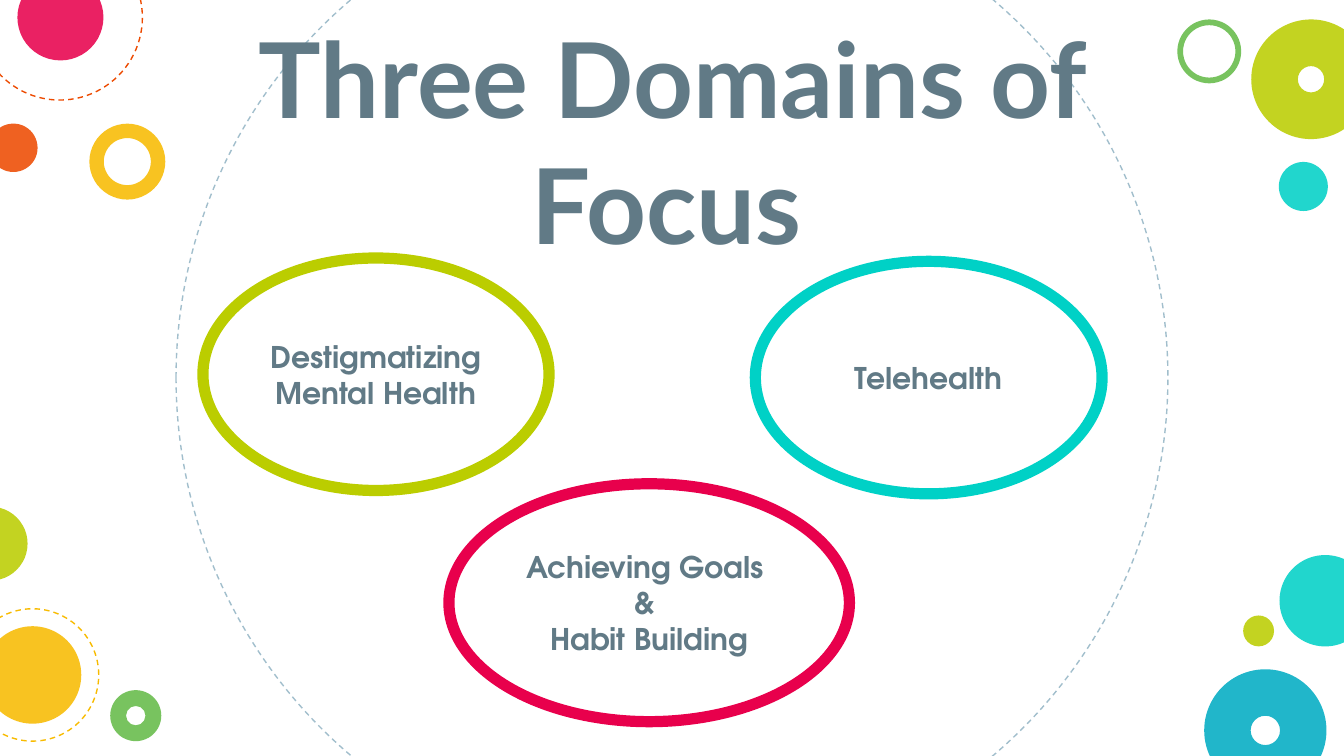
"""Build the "Three Domains of Focus" slide with its ring of coloured circles."""
import pptx
import pptx.dml.color
import pptx.enum.dml
import pptx.enum.shapes
import pptx.enum.text
import pptx.oxml
import pptx.oxml.ns
import pptx.util

PX = 4572
COLORS = {
    "slate": "617A86", "mist": "A1BECC", "teal": "00D1C6", "blue": "00ACC3",
    "lime": "BBCD00", "green": "65BB48", "amber": "F8BB00", "orange": "ED4A00",
    "pink": "E8004C",
}
OVAL = pptx.enum.shapes.MSO_SHAPE.OVAL
DONUT = pptx.enum.shapes.MSO_SHAPE.DONUT


def add_round(kind, box, fill=None, line=None, width=0.75):
    sp = s.shapes.add_shape(kind, *[v * PX for v in box])
    sp.shadow.inherit = False
    if fill:
        sp.fill.solid()
        sp.fill.fore_color.rgb = pptx.dml.color.RGBColor.from_string(COLORS[fill])
        clr = sp.fill._xPr.find(".//" + pptx.oxml.ns.qn("a:srgbClr"))
        clr.append(pptx.oxml.parse_xml(
            f'<a:alpha {pptx.oxml.ns.nsdecls("a")} val="87000"/>'))
    else:
        sp.fill.background()
    if line:
        sp.line.color.rgb = pptx.dml.color.RGBColor.from_string(COLORS[line])
        sp.line.width = pptx.util.Pt(width)
    else:
        sp.line.fill.background()
    return sp


def add_text(sp, anchor, font, paragraphs):
    tf = sp.text_frame
    tf.word_wrap = True
    tf.vertical_anchor = anchor
    tf.margin_left = tf.margin_right = tf.margin_top = tf.margin_bottom = 20 * PX
    for i, runs in enumerate(paragraphs):
        p = tf.add_paragraph() if i else tf.paragraphs[0]
        p.alignment = pptx.enum.text.PP_ALIGN.CENTER
        for text, size in runs:
            r = p.add_run()
            r.text = text
            r.font.name = font
            r.font.size = pptx.util.Pt(size)
            r.font.bold = True
            r.font.color.rgb = pptx.dml.color.RGBColor.from_string(COLORS["slate"])


prs = pptx.Presentation()
prs.slide_width = 2000 * PX
prs.slide_height = 1125 * PX
s = prs.slides.add_slide(prs.slide_layouts[6])

for left, top, size, color in [
    (262, -176, 1476, "mist"), (-34, -97, 246, "orange"), (-50, 906, 197, "amber"),
]:
    sp = add_round(OVAL, (left, top, size, size), line=color)
    sp.line.dash_style = pptx.enum.dml.MSO_LINE.DASH

for left, top, size, color in [
    (1904, 826, 136, "teal"), (1850, 916, 46, "lime"), (-16, 184, 72, "orange"),
    (26, -38, 128, "pink"), (-24, 932, 145, "amber"), (-69, 754, 110, "lime"),
    (1903, 241, 73, "teal"),
]:
    add_round(OVAL, (left, top, size, size), fill=color)

for left, top, size, color, ring in [
    (133, 184, 113, "amber", 0.19), (1792, 996, 182, "blue", 0.38),
    (1752, 29, 95, "green", 0.09), (1862, 29, 178, "lime", 0.39),
    (164, 1027, 76, "green", 0.31),
]:
    sp = add_round(DONUT, (left, top, size, size), fill=color)
    sp.adjustments[0] = ring

for box, color, lines in [
    ((302, 384, 515, 346), "lime", ["Destigmatizing Mental Health"]),
    ((1124, 389, 516, 346), "teal", ["Telehealth"]),
    ((668, 720, 596, 354), "pink", ["Achieving Goals ", "& ", "Habit Building"]),
]:
    sp = add_round(OVAL, box, line=color, width=6)
    add_text(sp, pptx.enum.text.MSO_ANCHOR.MIDDLE, "TeX Gyre Adventor",
             [[(text, 16)] for text in lines])

title = s.shapes.add_textbox(332 * PX, 46 * PX, 1336 * PX, 369 * PX)
add_text(title, pptx.enum.text.MSO_ANCHOR.BOTTOM, "Lato",
         [[("Three Domains of Focus", 56), (" ", 23)]])

prs.save("out.pptx")
